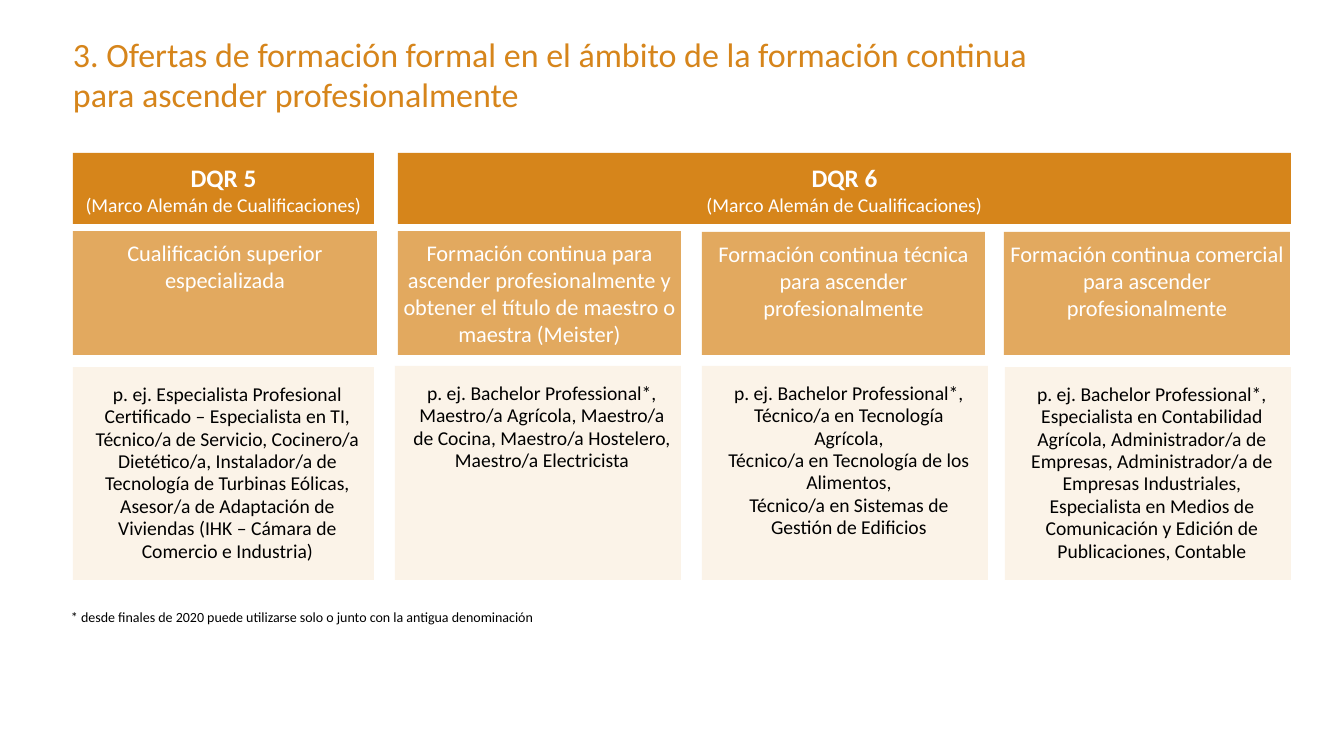
from pptx import Presentation
from pptx.dml.color import RGBColor
from pptx.enum.shapes import MSO_SHAPE
from pptx.enum.text import MSO_ANCHOR, MSO_AUTO_SIZE, PP_ALIGN
from pptx.oxml.ns import qn
from pptx.util import Emu, Pt

RECT = MSO_SHAPE.RECTANGLE
TOP, MIDDLE = MSO_ANCHOR.TOP, MSO_ANCHOR.MIDDLE
LEFT, CENTER = PP_ALIGN.LEFT, PP_ALIGN.CENTER
NO_FIT = MSO_AUTO_SIZE.NONE

ORANGE, LIGHT_ORANGE, CREAM = "D6851B", "E2A95F", "FBF3E8"
WHITE, BLACK = "FFFFFF", "000000"
FONT = "Calibri"
LABEL_INSETS = (4, 8, 4, 8)
LEVEL_INSETS = (4, 8, 4, 0)
EXAMPLE_INSETS = (16, 16, 8, 16)

# level, box
LEVELS = [
    ("DQR 5", (73, 153, 301, 71)),
    ("DQR 6", (398, 153, 893, 71)),
]

# pathway, its box, examples, their box
PATHWAYS = [
    ("Cualificación superior especializada", (73, 231, 304, 124),
     "p. ej. Especialista Profesional Certificado – Especialista en TI, "
     "Técnico/a de Servicio, Cocinero/a Dietético/a, Instalador/a de "
     "Tecnología de Turbinas Eólicas,\nAsesor/a de Adaptación de Viviendas "
     "(IHK – Cámara de Comercio e Industria)", (73, 367, 301, 213)),
    ("Formación continua para ascender profesionalmente y obtener el título "
     "de maestro o maestra (Meister)", (398, 231, 283, 124),
     "p. ej. Bachelor Professional*,\nMaestro/a Agrícola, Maestro/a de "
     "Cocina, Maestro/a Hostelero, Maestro/a Electricista",
     (395, 366, 286, 214)),
    ("Formación continua técnica para ascender profesionalmente",
     (702, 232, 283, 123),
     "p. ej. Bachelor Professional*,\nTécnico/a en Tecnología Agrícola,\n"
     "Técnico/a en Tecnología de los Alimentos,\n"
     "Técnico/a en Sistemas de Gestión de Edificios", (702, 366, 286, 214)),
    ("Formación continua comercial para ascender profesionalmente",
     (1004, 232, 286, 123),
     "p. ej. Bachelor Professional*, Especialista en Contabilidad Agrícola, "
     "Administrador/a de Empresas, Administrador/a de Empresas Industriales,\n"
     "Especialista en Medios de Comunicación y Edición de Publicaciones, "
     "Contable", (1005, 367, 286, 213)),
]


def px(length):
    return Emu(round(length * 914400 / 100.8))


def color(hex_string):
    return RGBColor.from_string(hex_string)


def place(shape, box):
    shape.left, shape.top, shape.width, shape.height = map(px, box)


def write(shape, runs, ink, insets=(0, 0, 0, 0), align=CENTER, anchor=TOP,
          spacing=1.0):
    """Fill one paragraph with (text, size, bold) runs; newlines break lines."""
    frame = shape.text_frame
    frame.word_wrap = True
    frame.auto_size = NO_FIT
    frame.vertical_anchor = anchor
    (frame.margin_left, frame.margin_top,
     frame.margin_right, frame.margin_bottom) = map(px, insets)
    paragraph = frame.paragraphs[0]
    paragraph.alignment = align
    paragraph.line_spacing = spacing
    paragraph.space_before = Pt(0)
    for text, size, bold in runs:
        for number, line in enumerate(text.split("\n")):
            if number:
                paragraph.add_line_break()
            if line:
                run = paragraph.add_run()
                run.text = line
                run.font.name = FONT
                run.font.size = Pt(size)
                run.font.bold = bold
                run.font.color.rgb = color(ink)


def paint(shape, fill):
    shape.fill.solid()
    shape.fill.fore_color.rgb = color(fill)
    shape.line.fill.background()


def add_panel(slide, box, fill):
    panel = slide.shapes.add_shape(RECT, *map(px, box))
    panel.shadow.inherit = False
    paint(panel, fill)
    return panel


def add_heading(slide, box):
    heading = slide.shapes.title
    place(heading, box)
    write(heading, [("3. Ofertas de formación formal en el ámbito de la "
                     "formación continua para ascender profesionalmente",
                     24.3, False)], ORANGE, align=LEFT)


def add_level(slide, level, box):
    write(add_panel(slide, box, ORANGE),
          [(level + "\n", 18, True),
           ("(Marco Alemán de Cualificaciones)", 14, False)],
          WHITE, LEVEL_INSETS, anchor=MIDDLE, spacing=Pt(17))


def use_body(slide, box):
    """Turn the body placeholder into an unbulleted pathway panel."""
    body = slide.placeholders[1]
    place(body, box)
    paint(body, LIGHT_ORANGE)
    properties = body.text_frame.paragraphs[0]._p.get_or_add_pPr()
    properties.set("marL", "0")
    properties.set("indent", "0")
    properties.append(properties.makeelement(qn("a:buNone"), {}))
    return body


def add_pathway(slide, panel, pathway, examples, examples_box):
    write(panel, [(pathway, 16, False)], WHITE, LABEL_INSETS)
    write(add_panel(slide, examples_box, CREAM), [(examples, 14, False)],
          BLACK, EXAMPLE_INSETS, spacing=Pt(16))


def add_footnote(slide, box):
    footnote = slide.shapes.add_textbox(*map(px, box))
    write(footnote, [("* desde finales de 2020 puede utilizarse solo o junto "
                      "con la antigua denominación", 10, False)],
          BLACK, align=LEFT, anchor=MIDDLE)


def main():
    presentation = Presentation()
    presentation.slide_width = px(1344)
    presentation.slide_height = px(756)
    slide = presentation.slides.add_slide(presentation.slide_layouts[1])
    add_heading(slide, (73, 33, 992, 49))
    for level, box in LEVELS:
        add_level(slide, level, box)
    for number, (pathway, box, examples, examples_box) in enumerate(PATHWAYS):
        panel = (add_panel(slide, box, LIGHT_ORANGE) if number
                 else use_body(slide, box))
        add_pathway(slide, panel, pathway, examples, examples_box)
    add_footnote(slide, (71, 603, 807, 27))
    presentation.save("out.pptx")


if __name__ == "__main__":
    main()
